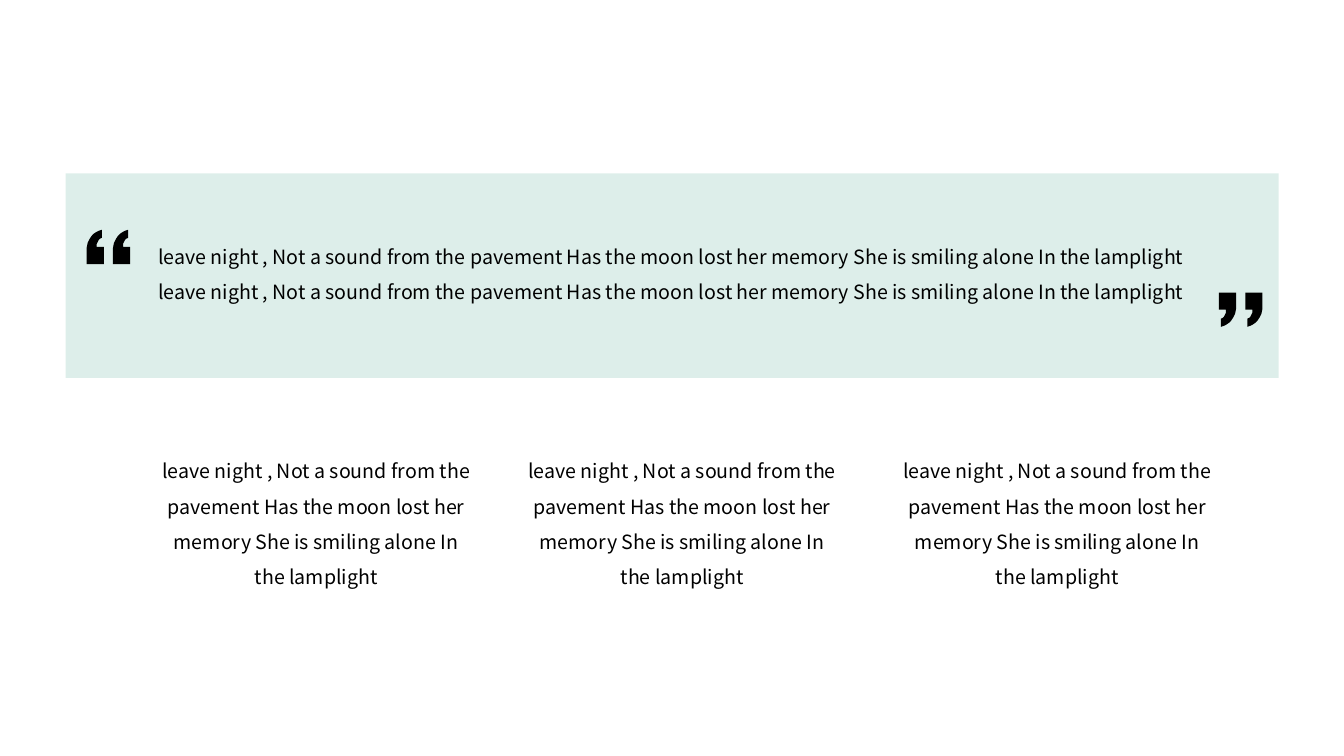
import pptx
import pptx.util
import pptx.dml.color
import pptx.enum.shapes
import pptx.enum.text
import pptx.oxml.ns
import pptx.oxml.xmlchemy
from dataclasses import dataclass


@dataclass(frozen=True)
class Theme:
    band: str = "91C9BA"
    ink: str = "000000"
    opacity: int = 30
    font: str = "Noto Sans CJK SC"
    size: int = 14
    spacing: float = 1.5


theme = Theme()
verse = ("leave night , Not a sound from the pavement Has the moon lost her "
         "memory She is smiling alone In the lamplight")
quote = " ".join([verse] * 2)

# Places are percentages of the slide's width and height
wide, high = 13.33, 7.5
band_box = (4.88, 22.93, 90.25, 27.07)
quote_box = (11.03, 30.13, 79.22, 10.8)
columns = [11.03, 38.26, 66.17]
column_top, column_width, column_height = 61.07, 25, 14.93
mark_step = 1.96
marks = [(6.45, 30.4, False), (90.7, 38.7, True)]

# One quotation mark, in hundredths of an inch
mark_size = (17, 34)
outline = [(15, 0), (15, 8), (13, 9), (12, 10), (11, 12), (10, 14), (10, 17),
           (17, 17), (17, 34), (0, 34), (0, 18), (1, 13), (2, 11), (3, 9),
           (5, 6), (7, 4), (10, 2), (12, 1)]


def place(left, top, width=0, height=0):
    """Turn percentages of the slide into lengths."""
    shares = zip((left, top, width, height), (wide, high) * 2)
    return [pptx.util.Inches(part * whole / 100) for part, whole in shares]


def attach(parent, tag, key, value):
    """Add a child element with one attribute."""
    child = pptx.oxml.xmlchemy.OxmlElement(tag)
    child.set(key, value)
    parent.append(child)


def paint(shape, color, opacity=100):
    shape.shadow.inherit = False
    shape.line.fill.background()
    shape.fill.solid()
    shape.fill.fore_color.rgb = pptx.dml.color.RGBColor.from_string(color)
    if opacity < 100:
        tint = shape._element.spPr.find(".//" + pptx.oxml.ns.qn("a:srgbClr"))
        attach(tint, "a:alpha", "val", str(opacity * 1000))


def write(slide, text, box, align="LEFT", anchor="TOP", before=0):
    frame = slide.shapes.add_textbox(*place(*box)).text_frame
    frame.word_wrap = True
    frame.auto_size = pptx.enum.text.MSO_AUTO_SIZE.SHAPE_TO_FIT_TEXT
    frame.vertical_anchor = pptx.enum.text.MSO_ANCHOR[anchor]
    line = frame.paragraphs[0]
    line.alignment = pptx.enum.text.PP_ALIGN[align]
    line.line_spacing = theme.spacing
    line.space_before = pptx.util.Pt(before)
    run = line.add_run()
    run.text = text
    run.font.name = theme.font
    run.font.size = pptx.util.Pt(theme.size)
    run.font.color.rgb = pptx.dml.color.RGBColor.from_string(theme.ink)
    attach(run._r.get_or_add_rPr(), "a:ea", "typeface", theme.font)


def draw_mark(slide, left, top, turned):
    """Draw one quotation mark, turned half round when it closes."""
    points = outline
    if turned:
        points = [(mark_size[0] - x, mark_size[1] - y) for x, y in outline]
    pen = slide.shapes.build_freeform(*points[0], scale=pptx.util.Inches(0.01))
    pen.add_line_segments(points[1:], close=True)
    paint(pen.convert_to_shape(*place(left, top)[:2]), theme.ink)


def main():
    deck = pptx.Presentation()
    deck.slide_width = pptx.util.Inches(wide)
    deck.slide_height = pptx.util.Inches(high)
    slide = deck.slides.add_slide(deck.slide_layouts[6])

    band = slide.shapes.add_shape(
        pptx.enum.shapes.MSO_SHAPE.RECTANGLE, *place(*band_box))
    paint(band, theme.band, theme.opacity)
    write(slide, quote, quote_box, before=10)

    for left, top, turned in marks:
        for step in range(2):
            draw_mark(slide, left + step * mark_step, top, turned)

    for left in columns:
        write(slide, verse, (left, column_top, column_width, column_height),
              align="CENTER", anchor="MIDDLE")

    deck.save("out.pptx")


if __name__ == "__main__":
    main()
